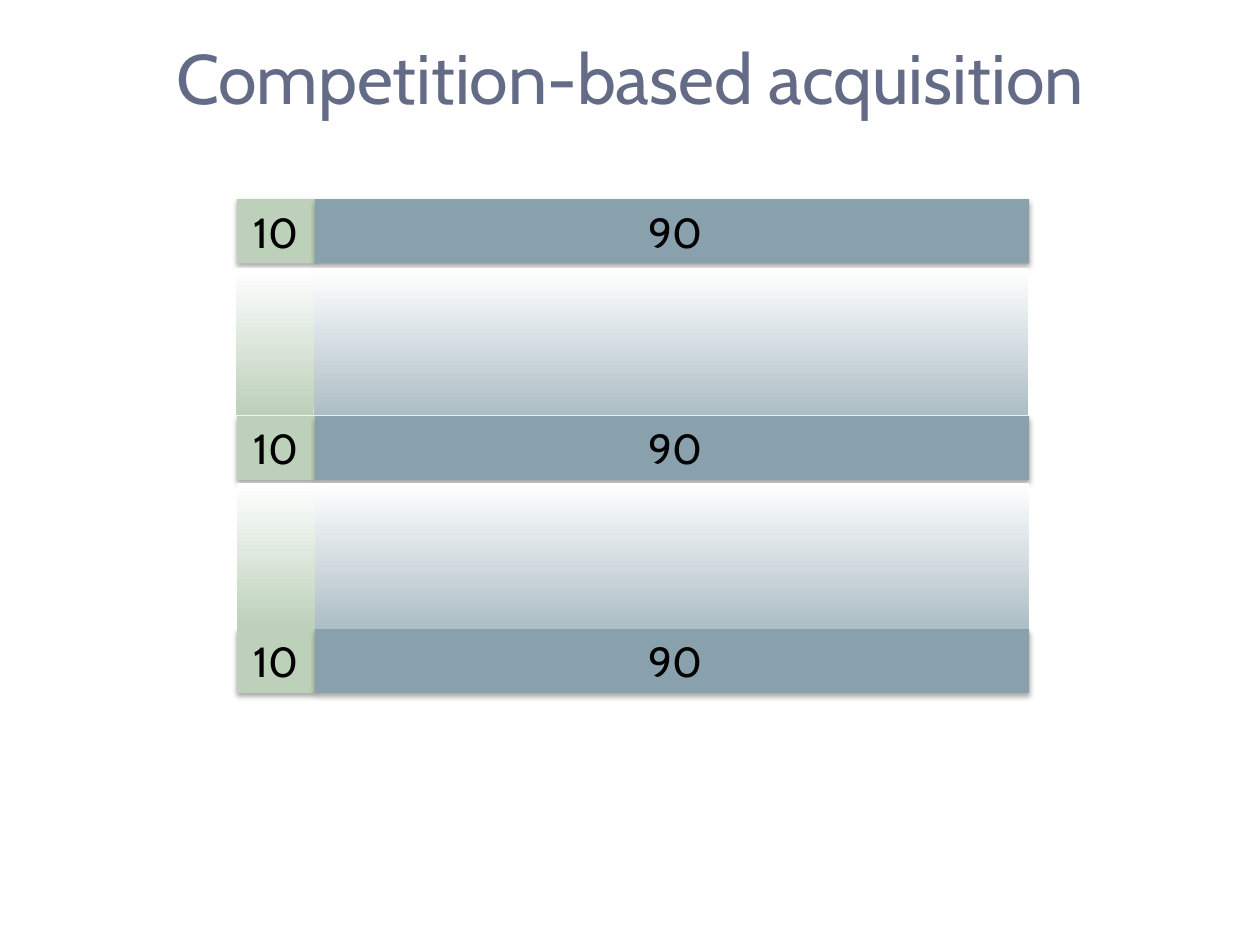
from dataclasses import dataclass

from lxml.etree import SubElement
from pptx import Presentation
from pptx.dml.color import RGBColor
from pptx.enum.shapes import MSO_SHAPE
from pptx.enum.text import MSO_ANCHOR as Anchor, PP_ALIGN as Align
from pptx.oxml.ns import qn
from pptx.shapes.autoshape import Shape
from pptx.slide import Slide
from pptx.util import Pt

FONT = "Cabin"
TITLE_COLOR = RGBColor(0x64, 0x6B, 0x86)
GREEN = RGBColor(0xBC, 0xD0, 0xBA)
BLUE = RGBColor(0x88, 0xA1, 0xAD)
PALE_BLUE = RGBColor(0xAD, 0xBE, 0xC6)
BLACK = RGBColor(0, 0, 0)
WHITE = RGBColor(0xFF, 0xFF, 0xFF)

BAR_HEIGHT = 36.7
FADE_HEIGHT = 83.5
BAR_TOPS = (113.8, 237.6, 359.3)
FADE_ORIGINS = ((134.6, 153.4), (135.4, 275.8))  # left, top


@dataclass(frozen=True)
class Share:
    label: str
    left: float
    width: float
    color: RGBColor
    fade_color: RGBColor
    text_indent: float


SHARES = (
    Share("10", 135.4, 44.6, GREEN, GREEN, 0),
    Share("90", 180, 408.2, BLUE, PALE_BLUE, 4),
)


def format_text(shape: Shape, text: str, size: float, color: RGBColor) -> None:
    frame = shape.text_frame
    frame.text = text
    frame_format = {"word_wrap": True, "vertical_anchor": Anchor.MIDDLE,
                    "margin_top": 0, "margin_bottom": 0}
    for name, value in frame_format.items():
        setattr(frame, name, value)
    paragraph = frame.paragraphs[0]
    paragraph.alignment = Align.CENTER
    font = paragraph.runs[0].font
    for name, value in {"name": FONT, "size": Pt(size), "bold": False}.items():
        setattr(font, name, value)
    font.color.rgb = color


def add_rectangle(slide: Slide, left: float, top: float,
                  width: float, height: float) -> Shape:
    shape = slide.shapes.add_shape(MSO_SHAPE.RECTANGLE, Pt(left), Pt(top),
                                   Pt(width), Pt(height))
    shape.shadow.inherit = False
    shape.line.fill.background()
    return shape


def add_shadow(shape: Shape) -> None:
    effects = shape.element.spPr.find(qn("a:effectLst"))
    shadow = SubElement(effects, qn("a:outerShdw"), blurRad=str(Pt(3.1)),
                        dist=str(Pt(1.8)), dir="5400000", rotWithShape="0")
    color = SubElement(shadow, qn("a:srgbClr"), val=str(BLACK))
    SubElement(color, qn("a:alpha"), val="35000")


def add_bar(slide: Slide, share: Share, top: float) -> None:
    bar = add_rectangle(slide, share.left, top, share.width, BAR_HEIGHT)
    bar.fill.solid()
    bar.fill.fore_color.rgb = share.color
    add_shadow(bar)
    format_text(bar, share.label, 24, BLACK)
    bar.text_frame.margin_left = Pt(7.2 + share.text_indent)


def add_fade(slide: Slide, share: Share, left: float, top: float) -> None:
    fade = add_rectangle(slide, left, top, share.width, FADE_HEIGHT)
    fade.fill.gradient()
    fade.fill.gradient_angle = 90  # from bottom to top
    for stop, color in zip(fade.fill.gradient_stops, (share.fade_color, WHITE)):
        stop.color.rgb = color


def main() -> None:
    presentation = Presentation()
    presentation.slide_width, presentation.slide_height = Pt(720), Pt(540)
    slide = presentation.slides.add_slide(presentation.slide_layouts[5])

    # Title
    title = slide.shapes.title
    position = {"left": 36, "top": 17.3, "width": 648, "height": 52.6}
    for name, value in position.items():
        setattr(title, name, Pt(value))
    format_text(title, "Competition-based acquisition", 40, TITLE_COLOR)

    # Three rows of shares
    for top in BAR_TOPS:
        for share in SHARES:
            add_bar(slide, share, top)

    # Fades leading into the next row
    for origin, top in FADE_ORIGINS:
        for share in SHARES:
            add_fade(slide, share, origin + share.left - SHARES[0].left, top)

    presentation.save("out.pptx")


if __name__ == "__main__":
    main()
